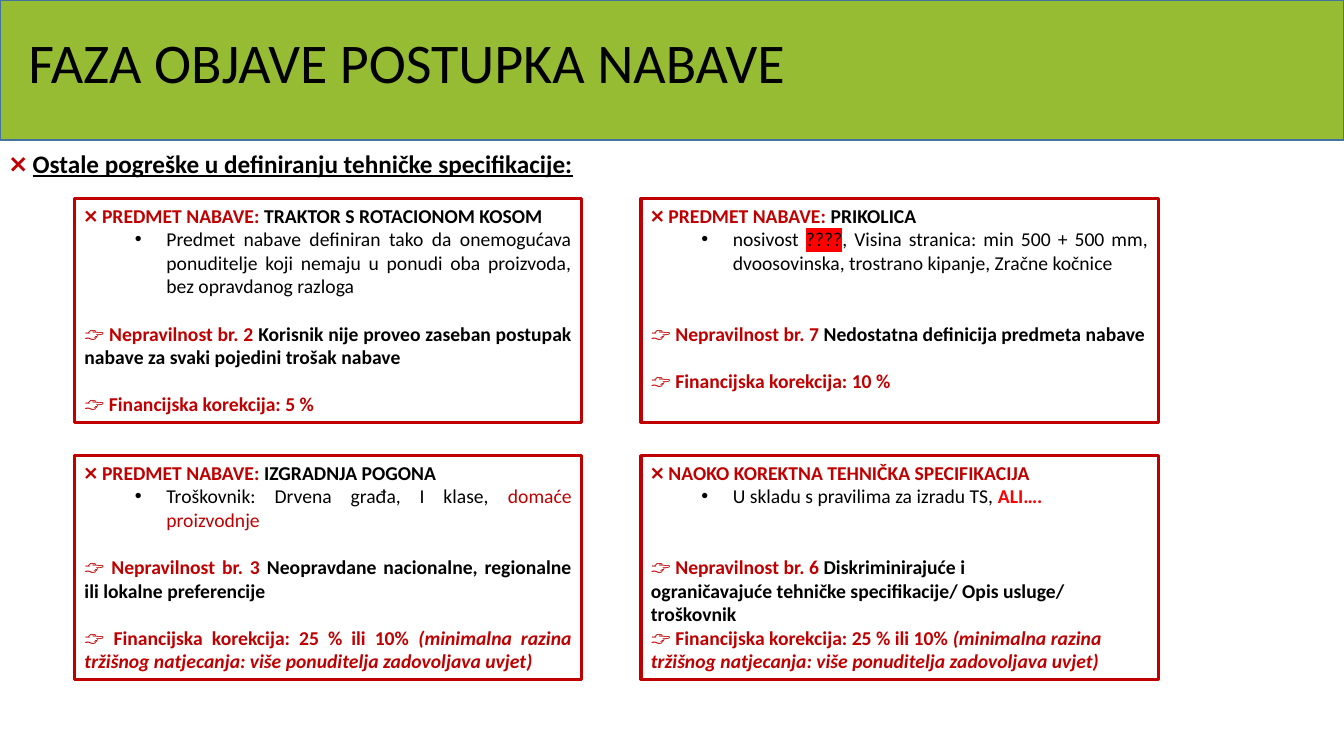
from dataclasses import dataclass

from lxml import etree
from pptx import Presentation
from pptx.dml.color import RGBColor
from pptx.enum.shapes import MSO_SHAPE
from pptx.enum.text import MSO_ANCHOR, MSO_AUTO_SIZE, PP_ALIGN
from pptx.oxml.ns import qn
from pptx.util import Pt

RECT = MSO_SHAPE.RECTANGLE
TOP, MIDDLE = MSO_ANCHOR.TOP, MSO_ANCHOR.MIDDLE
FIXED = MSO_AUTO_SIZE.NONE
LEFT, JUST = PP_ALIGN.LEFT, PP_ALIGN.JUSTIFY


@dataclass(frozen=True)
class Theme:
    font: str = "Calibri"
    title: int = 40
    head: int = 18
    body: int = 14
    line: int = 17
    black: str = "000000"
    dark: str = "C00000"
    red: str = "FF0000"
    green: str = "96BC33"
    blue: str = "43739E"


THEME = Theme()
DARK = {"color": THEME.dark}
LABEL = {"color": THEME.dark, "bold": True}
NOTE = {"color": THEME.dark, "bold": True, "italic": True}
BOLD = {"bold": True}


def write(para, text, size=THEME.body, color=THEME.black, bold=False,
          italic=False, under=False, mark=None):
    """Add a run; mark is its highlight colour."""
    run = para.add_run()
    run.text = text
    font = run.font
    font.name, font.size = THEME.font, Pt(size)
    font.bold, font.italic, font.underline = bold, italic, under
    font.color.rgb = RGBColor.from_string(color)
    if mark:
        light = etree.Element(qn("a:highlight"))
        etree.SubElement(light, qn("a:srgbClr"), val=mark)
        font._element.find(qn("a:solidFill")).addnext(light)


def topic(text):
    return [("❌ PREDMET NABAVE: ", LABEL), (text, BOLD)]


def fault(number, text):
    return [("👉 ", DARK), (f"Nepravilnost br. {number} ", LABEL), (text, BOLD)]


def penalty(rate, note=""):
    runs = [("👉 ", DARK), (f"Financijska korekcija: {rate}", LABEL)]
    return runs + [(" " + note, NOTE)] if note else runs


class Deck:
    def __init__(self, theme):
        self.theme = theme
        self.file = Presentation()
        self.file.slide_width, self.file.slide_height = Pt(960), Pt(540)
        self.slide = self.file.slides.add_slide(self.file.slide_layouts[5])
        self.shapes = self.slide.shapes

    def rect(self, place, line, width, fill=None):
        box = self.shapes.add_shape(RECT, *map(Pt, place))
        box.shadow.inherit = False
        if fill:
            box.fill.solid()
            box.fill.fore_color.rgb = RGBColor.from_string(fill)
        else:
            box.fill.background()
        box.line.color.rgb = RGBColor.from_string(line)
        box.line.width = Pt(width)
        return box

    def band(self, *place):
        """Draw the title band behind everything else."""
        box = self.rect(place, self.theme.blue, 1, self.theme.green)
        self.shapes._spTree.insert(2, box._element)

    def title(self, text, *place):
        box = self.shapes.title
        box.left, box.top, box.width, box.height = map(Pt, place)
        frame = box.text_frame
        frame.auto_size, frame.vertical_anchor = FIXED, MIDDLE
        para = frame.paragraphs[0]
        para.alignment, para.line_spacing = LEFT, 0.9
        write(para, text, self.theme.title)

    def head(self, mark, text, *place):
        frame = self.shapes.add_textbox(*map(Pt, place)).text_frame
        frame.word_wrap = False
        para, size = frame.paragraphs[0], self.theme.head
        write(para, mark, size, **LABEL)
        write(para, text, size, bold=True, under=True)

    def card(self, place, items):
        """Draw a framed box; each item is (runs, lines of gap, align, bullet)."""
        frame = self.rect(place, self.theme.dark, 2.25).text_frame
        frame.word_wrap, frame.auto_size = True, FIXED
        frame.vertical_anchor = TOP
        for index, (runs, gap, align, dot) in enumerate(items):
            para = frame.add_paragraph() if index else frame.paragraphs[0]
            para.alignment = align
            if gap:
                para.space_before = Pt(gap * self.theme.line)
            if dot:
                self.bullet(para)
            for text, style in runs:
                write(para, text, **style)

    def bullet(self, para):
        para.level = 1
        props = para._p.get_or_add_pPr()
        props.set("marL", str(Pt(58.5)))
        props.set("indent", str(Pt(-22.5)))
        etree.SubElement(props, qn("a:buFont"), typeface="Arial")
        etree.SubElement(props, qn("a:buChar"), char="•")


RIVALS = "(minimalna razina tržišnog natjecanja: više ponuditelja zadovoljava uvjet)"
CARDS = [
    [(topic("TRAKTOR S ROTACIONOM KOSOM"), 0, LEFT, False),
     ([("Predmet nabave definiran tako da onemogućava ponuditelje koji nemaju "
        "u ponudi oba proizvoda, bez opravdanog razloga", {})], 0, JUST, True),
     (fault(2, "Korisnik nije proveo zaseban postupak nabave za svaki "
               "pojedini trošak nabave"), 1, JUST, False),
     (penalty("5 %"), 1, JUST, False)],
    [(topic("PRIKOLICA"), 0, LEFT, False),
     ([("nosivost ", {}), ("????", {"mark": THEME.red}),
       (", Visina stranica: min 500 + 500 mm, dvoosovinska, trostrano "
        "kipanje, Zračne kočnice", {})], 0, JUST, True),
     (fault(7, "Nedostatna definicija predmeta nabave"), 2, JUST, False),
     (penalty("10 %"), 1, JUST, False)],
    [(topic("IZGRADNJA POGONA"), 0, LEFT, False),
     ([("Troškovnik: Drvena građa, I klase, ", {}),
       ("domaće proizvodnje", DARK)], 0, JUST, True),
     (fault(3, "Neopravdane nacionalne, regionalne ili lokalne preferencije"),
      1, JUST, False),
     (penalty("25 % ili 10%", RIVALS), 1, JUST, False)],
    [([("❌ NAOKO KOREKTNA TEHNIČKA SPECIFIKACIJA", LABEL)], 0, LEFT, False),
     ([("U skladu s pravilima za izradu TS, ", {}),
       ("ALI….", {"color": THEME.red, "bold": True})], 0, LEFT, True),
     (fault(6, "Diskriminirajuće i"), 2, JUST, False),
     ([("ograničavajuće tehničke specifikacije/ Opis usluge/ troškovnik", BOLD)],
      0, LEFT, False),
     (penalty("25 % ili 10%", RIVALS), 0, LEFT, False)],
]
COLUMNS = [(53.3, 362.2), (457.9, 369.4)]
ROW, STEP, HEIGHT = 141.8, 183.6, 159.8


def main():
    deck = Deck(THEME)
    deck.band(0, 0, 960, 100)
    deck.title("FAZA OBJAVE POSTUPKA NABAVE", 13, 14.4, 907, 64)
    for index, items in enumerate(CARDS):
        row, col = divmod(index, len(COLUMNS))
        left, width = COLUMNS[col]
        deck.card((left, ROW + row * STEP, width, HEIGHT), items)
    deck.head("❌ ", "Ostale pogreške u definiranju tehničke specifikacije:",
              0, 102.2, 434, 29)
    deck.file.save("out.pptx")


if __name__ == "__main__":
    main()
